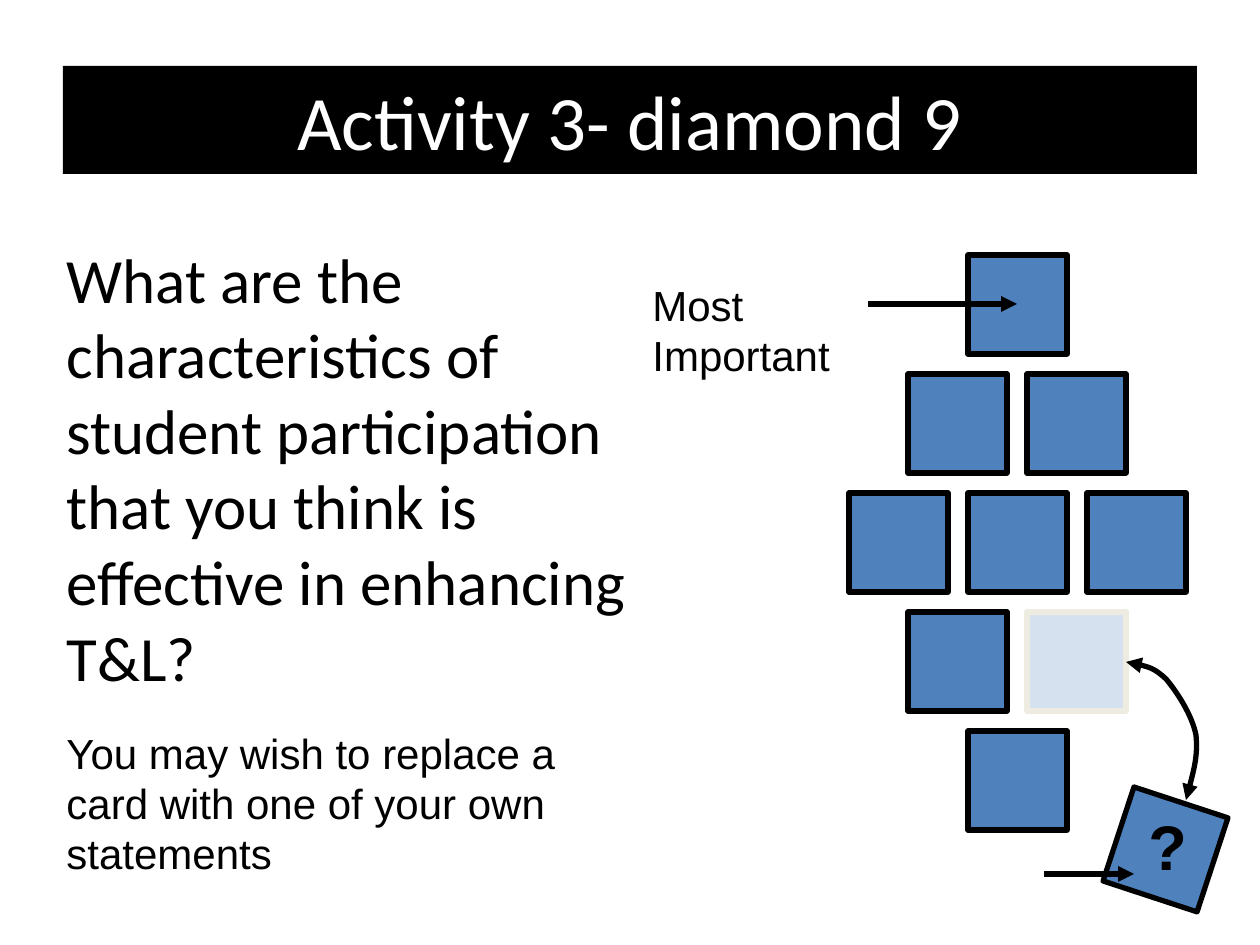
from lxml.etree import SubElement
from pptx import Presentation
from pptx.dml.color import RGBColor
from pptx.enum.shapes import MSO_CONNECTOR, MSO_SHAPE
from pptx.enum.text import MSO_ANCHOR, PP_ALIGN
from pptx.oxml.ns import qn
from pptx.util import Pt

SCALE = 914400 / 126
COLORS = {"black": "000000", "white": "FFFFFF", "card": "4F81BD", "faded": "EEECE1"}
CARD = 99
PITCH = 119
ROWS = (1, 2, 3, 2, 1)
FADED_CARD = (3, 1)


def px(*lengths):
    return [round(length * SCALE) for length in lengths]


def color(name):
    return RGBColor.from_string(COLORS[name])


def add_text(slide, box, text, size=24, font="Arial", ink="black", bold=False,
             align=PP_ALIGN.LEFT, anchor=MSO_ANCHOR.TOP, fill=None):
    shape = slide.shapes.add_textbox(*px(*box))
    if fill:
        shape.fill.solid()
        shape.fill.fore_color.rgb = color(fill)
    frame = shape.text_frame
    frame.word_wrap = True
    frame.vertical_anchor = anchor
    para = frame.paragraphs[0]
    para.alignment = align
    span = para.add_run()
    span.text = text
    span.font.size = Pt(size)
    span.font.name = font
    span.font.bold = bold
    span.font.color.rgb = color(ink)


def style_line(shape, ink="black", ends=()):
    shape.line.width = Pt(3)
    shape.line.color.rgb = color(ink)
    line = shape.line._get_or_add_ln()
    for end in ends:
        SubElement(line, qn(f"a:{end}"), type="triangle")


def add_card(slide, left, top, faded=False, rotation=0):
    card = slide.shapes.add_shape(MSO_SHAPE.RECTANGLE, *px(left, top, CARD, CARD))
    card.shadow.inherit = False
    card.rotation = rotation
    card.fill.solid()
    card.fill.fore_color.rgb = color("card")
    if faded:
        fill_color = card._element.spPr.find(qn("a:solidFill"))[0]
        SubElement(fill_color, qn("a:alpha"), val="23000")
    style_line(card, "faded" if faded else "black")


def add_arrow(slide, left, top, length):
    arrow = slide.shapes.add_connector(
        MSO_CONNECTOR.STRAIGHT, *px(left, top, left + length, top))
    style_line(arrow, ends=["tailEnd"])
    SubElement(arrow._element.spPr, qn("a:effectLst"))


def add_curve(slide, start, points):
    builder = slide.shapes.build_freeform(*start, scale=SCALE)
    builder.add_line_segments(points, close=False)
    curve = builder.convert_to_shape()
    curve.shadow.inherit = False
    curve.fill.background()
    style_line(curve, ends=["headEnd", "tailEnd"])
    segments = list(curve._element.iter(qn("a:lnTo")))
    outline = segments[0].getparent()
    for first in range(0, len(segments), 3):
        bezier = SubElement(outline, qn("a:cubicBezTo"))
        for segment in segments[first:first + 3]:
            bezier.append(segment[0])
            outline.remove(segment)


def add_title(slide, left, top, width, height):
    add_text(slide, (left, top, width, height), "Activity 3- diamond 9", size=44,
             font="Calibri", ink="white", align=PP_ALIGN.CENTER,
             anchor=MSO_ANCHOR.MIDDLE, fill="black")


def add_question(slide, left, top):
    add_text(slide, (left, top, 635, 654),
             "What are the characteristics of student participation that you think "
             "is effective in enhancing T&L?", size=36, font="Calibri")
    add_text(slide, (left, top + 487, 576, 169),
             "You may wish to replace a card with one of your own statements")


def add_diamond(slide, center, top):
    for row, count in enumerate(ROWS):
        left = center - (PITCH * (count - 1) + CARD) // 2
        for column in range(count):
            add_card(slide, left + PITCH * column, top + PITCH * row,
                     faded=(row, column) == FADED_CARD)
    add_text(slide, (center - 377, top + 18, 238, 50), "Most Important")
    add_arrow(slide, center - 149, top + 49, 149)


def add_replacement(slide, left, top):
    add_card(slide, left, top, rotation=18.2)
    add_text(slide, (left + 20, top + 1, 69, 88), "?", size=36, bold=True)
    offsets = [(76, -22), (82, -45), (80, -65), (76, -85), (61, -108), (50, -121),
               (38, -132), (24, -136), (10, -138)]
    add_curve(slide, (left + 70, top), [(left + x, top + y) for x, y in offsets])
    add_arrow(slide, left - 72, top + 74, 90)


def main():
    deck = Presentation()
    deck.slide_width, deck.slide_height = px(1260, 945)
    page = deck.slides.add_slide(deck.slide_layouts[6])
    add_title(page, 63, 66, 1134, 108)
    add_question(page, 54, 234)
    add_diamond(page, 1017, 255)
    add_replacement(page, 1116, 800)
    deck.save("out.pptx")


if __name__ == "__main__":
    main()
